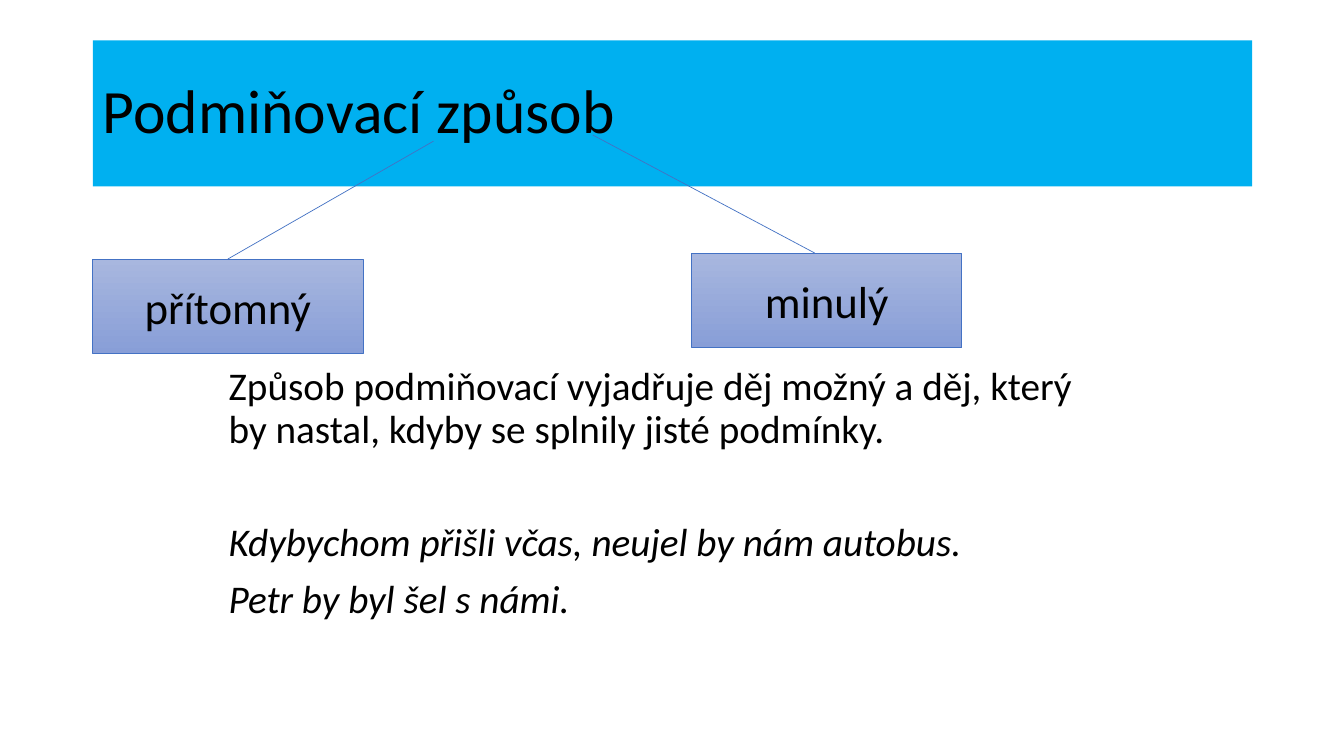
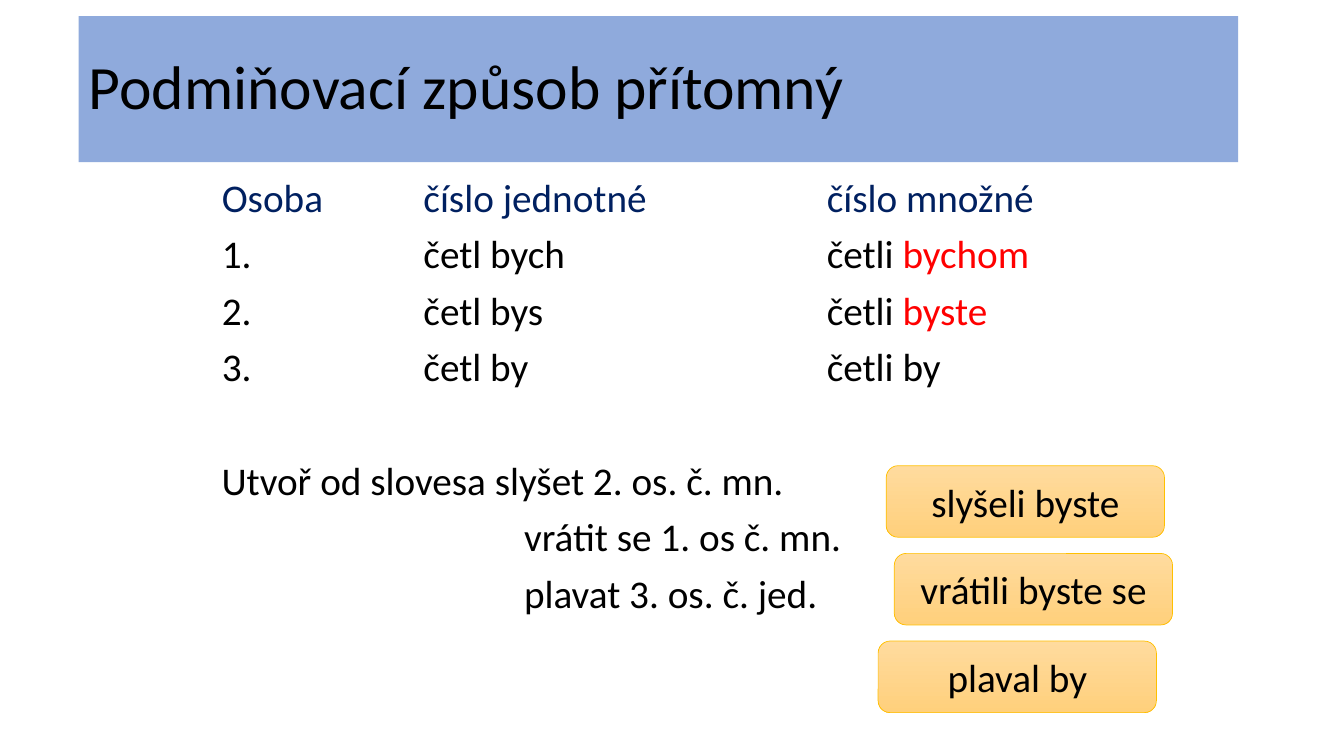
from lxml.etree import SubElement
from pptx import Presentation
from pptx.dml.color import RGBColor
from pptx.enum.shapes import MSO_CONNECTOR, MSO_SHAPE
from pptx.enum.text import MSO_ANCHOR, MSO_AUTO_SIZE, PP_ALIGN
from pptx.oxml.ns import qn
from pptx.util import Pt

PX = 9144  # EMU per px, 100 px to the inch
FONT = "Calibri"
COLORS = {
    "text": "000000",
    "heading": "002060",
    "ending": "FF0000",
    "cyan band": "00B0F0",
    "blue band": "8FAADC",
    "blue line": "4472C4",
    "blue top": "A8B7DF",
    "blue bottom": "889ED7",
    "gold line": "FFC000",
    "gold top": "FFDB9E",
    "gold bottom": "FFD07C",
}


def color(name):
    return RGBColor.from_string(COLORS[name])


def px(*lengths):
    return [length * PX for length in lengths]


def write(frame, *runs, size=28, ink="text", italic=False, align=PP_ALIGN.LEFT,
          spacing=0.9, before=0, indent=0):
    """Add a paragraph; a run is a string or a (string, colour name) pair."""
    paragraph = frame.paragraphs[0]
    if paragraph.runs:
        paragraph = frame.add_paragraph()
    paragraph.alignment = align
    paragraph.line_spacing = spacing
    paragraph.space_before = Pt(before)
    if indent:
        paragraph._p.get_or_add_pPr().set("marL", str(indent * PX))
    for part in runs:
        words, run_ink = (part, ink) if isinstance(part, str) else part
        run = paragraph.add_run()
        run.text = words
        run.font.name = FONT
        run.font.size = Pt(size)
        run.font.italic = italic
        run.font.color.rgb = color(run_ink)


def add_titled_slide(deck, title, left, top, band):
    slide = deck.slides.add_slide(deck.slide_layouts[5])
    heading = slide.shapes.title
    heading.left, heading.top, heading.width, heading.height = px(left, top, 1150, 145)
    heading.fill.solid()
    heading.fill.fore_color.rgb = color(band)
    frame = heading.text_frame
    frame.auto_size = MSO_AUTO_SIZE.NONE
    frame.vertical_anchor = MSO_ANCHOR.MIDDLE
    write(frame, title, size=44)
    return slide


def add_text_area(slide, left, top, width, height):
    frame = slide.shapes.add_textbox(*px(left, top, width, height)).text_frame
    frame.word_wrap = True
    return frame


def add_label(slide, outline, words, left, top, width, height, palette, size):
    label = slide.shapes.add_shape(outline, *px(left, top, width, height))
    label.shadow.inherit = False
    label.fill.gradient()
    label.fill.gradient_angle = 270
    for stop, end in zip(label.fill.gradient_stops, ("top", "bottom")):
        stop.color.rgb = color(f"{palette} {end}")
    label.line.color.rgb = color(f"{palette} line")
    label.line.width = Pt(0.5)
    label.text_frame.vertical_anchor = MSO_ANCHOR.MIDDLE
    write(label.text_frame, words, size=size, align=PP_ALIGN.CENTER, spacing=1)


def add_branch(slide, *ends):
    branch = slide.shapes.add_connector(MSO_CONNECTOR.STRAIGHT, *px(*ends))
    branch.line.color.rgb = color("blue line")
    branch.line.width = Pt(0.5)
    SubElement(branch._element.spPr, qn("a:effectLst"))


def add_plain_table(slide, rows, left, top, column_widths, row_height):
    table = slide.shapes.add_table(
        len(rows), len(column_widths),
        *px(left, top, sum(column_widths), row_height * len(rows))).table
    table.first_row = table.horz_banding = False
    for column, width in zip(table.columns, column_widths):
        column.width = width * PX
    for r, row in enumerate(rows):
        table.rows[r].height = row_height * PX
        for c, runs in enumerate(row):
            cell = table.cell(r, c)
            cell.fill.background()
            cell.margin_left = cell.margin_right = 0
            cell.margin_top = cell.margin_bottom = 0
            cell.vertical_anchor = MSO_ANCHOR.MIDDLE
            write(cell.text_frame, *runs, ink="text" if r else "heading")


def build_overview(deck):
    slide = add_titled_slide(deck, "Podmiňovací způsob", 92, 40, "cyan band")

    # Definition and examples
    body = add_text_area(slide, 217, 359, 900, 311)
    write(body, "Způsob podmiňovací vyjadřuje děj možný a děj, "
                "který by nastal, kdyby se splnily jisté podmínky.")
    write(body, "Kdybychom přišli včas, neujel by nám autobus.", italic=True, before=51)
    write(body, "Petr by byl šel s námi.", italic=True, before=10)

    # Two tenses branching from the title
    for tense, left, top in (("přítomný", 92, 257), ("minulý", 686, 251)):
        add_label(slide, MSO_SHAPE.RECTANGLE, tense, left, top, 268, 94, "blue", 32)
    add_branch(slide, 226, 257, 430, 140)
    add_branch(slide, 808, 251, 588, 134)


def build_present(deck):
    slide = add_titled_slide(deck, "Podmiňovací způsob přítomný", 78, 16, "blue band")

    # Conjugation
    rows = [
        (["Osoba"], ["číslo jednotné"], ["číslo množné"]),
        (["1."], ["četl bych"], ["četli ", ("bychom", "ending")]),
        (["2."], ["četl bys"], ["četli ", ("byste", "ending")]),
        (["3."], ["četl by"], ["četli by"]),
    ]
    add_plain_table(slide, rows, 220, 170, (200, 400, 280), 56)

    # Exercise
    tasks = add_text_area(slide, 210, 453, 670, 180)
    write(tasks, "Utvoř od slovesa slyšet 2. os. č. mn.")
    for task in ("vrátit se 1. os č. mn.", "plavat 3. os. č. jed."):
        write(tasks, task, before=10, indent=300)

    # Answers
    answers = (("slyšeli byste", 879), ("vrátili byste se", 887), ("plaval by", 871))
    for i, (answer, left) in enumerate(answers):
        add_label(slide, MSO_SHAPE.ROUNDED_RECTANGLE, answer,
                  left, 462 + 87 * i, 276, 71, "gold", 28)


def main():
    deck = Presentation()
    deck.slide_width, deck.slide_height = px(1333, 750)
    build_overview(deck)
    build_present(deck)
    deck.save("out.pptx")


if __name__ == "__main__":
    main()
